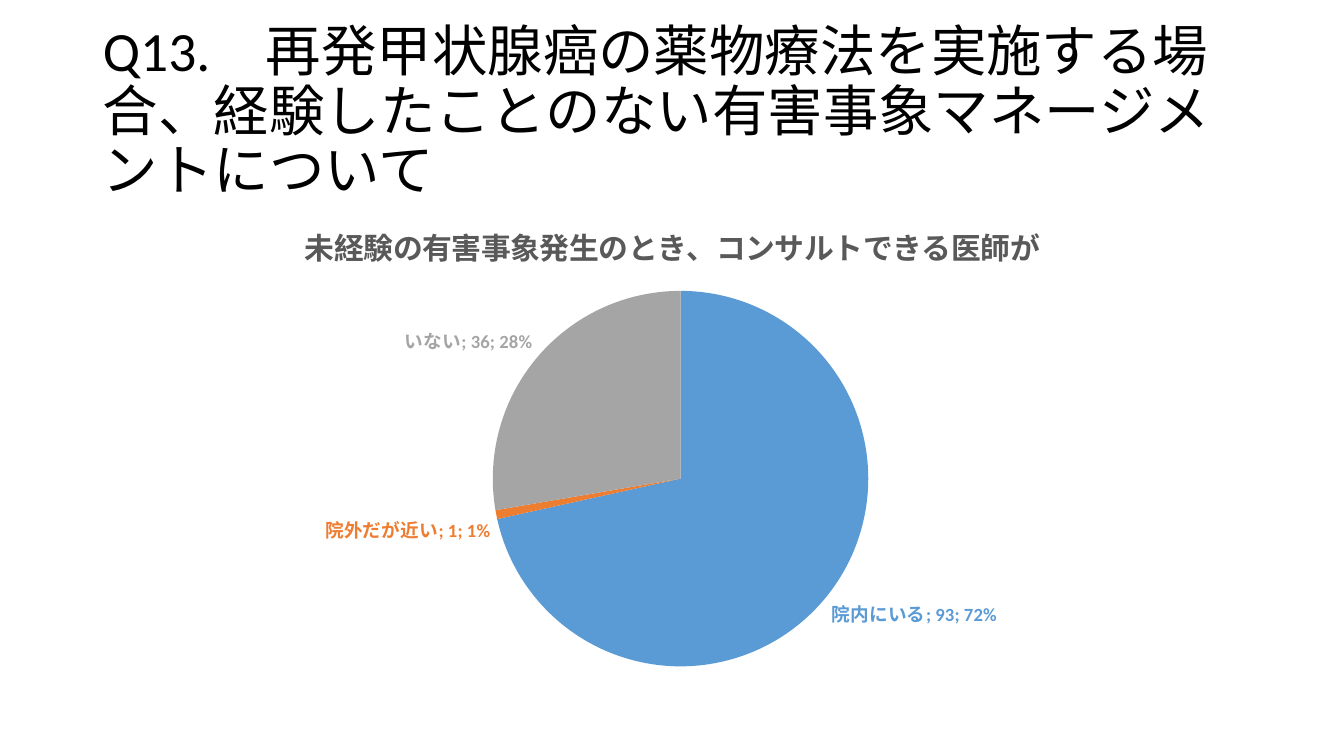
"""Build the Q13 survey slide: a question title above a pie chart of answers."""
from lxml import etree
from pptx import Presentation
from pptx.chart.data import CategoryChartData
from pptx.dml.color import RGBColor
from pptx.enum.chart import XL_CHART_TYPE as ChartType, XL_LABEL_POSITION as LabelPos
from pptx.enum.text import MSO_ANCHOR as Anchor
from pptx.oxml import parse_xml
from pptx.oxml.ns import nsdecls, qn
from pptx.util import Emu, Pt

QUESTION = "Q13.\u3000再発甲状腺癌の薬物療法を実施する場合、経験したことのない有害事象マネージメントについて".replace("\u3000", "　")
CHART_TITLE = "未経験の有害事象発生のとき、コンサルトできる医師が"
ANSWERS = [("院内にいる", 93, "5B9BD5"), ("院外だが近い", 1, "ED7D31"), ("いない", 36, "A5A5A5")]

SLIDE = (1344, 756)
TITLE_BOX = (93, 40, 1159, 146)
CHART_BOX = (93, 202, 1159, 480)
PIE_BOX = (493, 291, 376, 376)


class Theme:
    """Font, colours and type sizes."""
    font = "Calibri"
    ink, chart_title = "000000", "595959"
    question_pt, chart_title_pt, label_pt = 39.6, 21.3, 13.3


def px(*lengths):
    """Turn px into EMU."""
    return [Emu(round(n * 914400 / 100.8)) for n in lengths]


def style(font, size, color, bold=False):
    """Set the look of a font."""
    font.name, font.size, font.bold = Theme.font, Pt(size), bold
    font.color.rgb = RGBColor.from_string(color)


def add_question(s):
    """Add the question at the top."""
    tf = s.shapes.add_textbox(*px(*TITLE_BOX)).text_frame
    tf.word_wrap, tf.vertical_anchor = True, Anchor.MIDDLE
    p = tf.paragraphs[0]
    p.line_spacing = 0.9
    r = p.add_run()
    r.text = QUESTION
    style(r.font, Theme.question_pt, Theme.ink)


def place_pie(chart):
    """Fix the pie inside the chart frame."""
    left, top, width, height = CHART_BOX
    x, y, w, h = PIE_BOX
    parts = {"x": (x - left) / width, "y": (y - top) / height, "w": w / width, "h": h / height}
    modes = "".join(f'<c:{k}Mode val="edge"/>' for k in "xy")
    sizes = "".join(f'<c:{k} val="{v:.3f}"/>' for k, v in parts.items())
    area = chart.element.find(".//" + qn("c:plotArea"))
    for old in area.findall(qn("c:layout")):
        area.remove(old)
    area.insert(0, parse_xml(
        f'<c:layout {nsdecls("c")}><c:manualLayout><c:layoutTarget val="inner"/>'
        f'{modes}{sizes}</c:manualLayout></c:layout>'))


def label_slices(chart, series):
    """Colour the slices and label each with answer, count and share."""
    labels = series.data_labels
    labels.show_value = labels.show_percentage = labels.show_category_name = True
    labels.position = LabelPos.OUTSIDE_END
    for i, (_, _, color) in enumerate(ANSWERS):
        point = series.points[i]
        point.format.fill.solid()
        point.format.fill.fore_color.rgb = RGBColor.from_string(color)
        style(point.data_label.font, Theme.label_pt, color, True)
        point.data_label.position = LabelPos.OUTSIDE_END
    for flag in chart.element.xpath(".//c:dLbl/c:showCatName | .//c:dLbl/c:showPercent"):
        flag.set("val", "1")
    for flag in chart.element.xpath(".//c:showBubbleSize"):
        separator = etree.Element(qn("c:separator"))
        separator.text = "; "
        flag.addnext(separator)


def add_answers(s):
    """Add the pie chart of answers."""
    data = CategoryChartData()
    data.categories = [name for name, _, _ in ANSWERS]
    data.add_series(CHART_TITLE, [count for _, count, _ in ANSWERS])
    chart = s.shapes.add_chart(ChartType.PIE, *px(*CHART_BOX), data).chart
    style(chart.font, 10, Theme.ink)
    chart.has_legend = False
    chart.has_title = True
    r = chart.chart_title.text_frame.paragraphs[0].add_run()
    r.text = CHART_TITLE
    style(r.font, Theme.chart_title_pt, Theme.chart_title, True)
    plot = chart.plots[0]
    plot.vary_by_categories = True
    label_slices(chart, plot.series[0])
    place_pie(chart)


def main():
    """Build and save the slide."""
    prs = Presentation()
    prs.slide_width, prs.slide_height = px(*SLIDE)
    s = prs.slides.add_slide(prs.slide_layouts[6])
    add_question(s)
    add_answers(s)
    prs.save("out.pptx")


if __name__ == "__main__":
    main()
